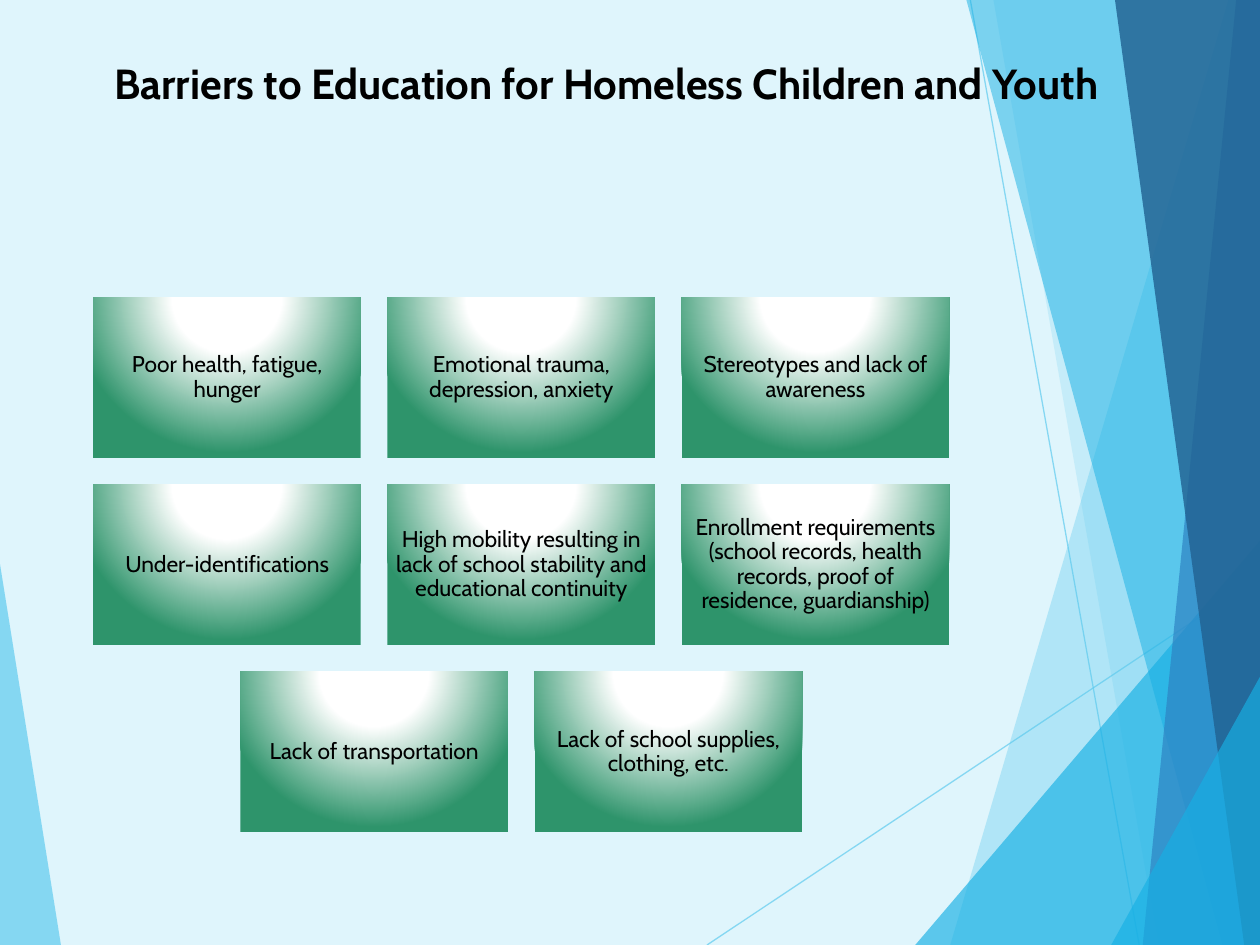
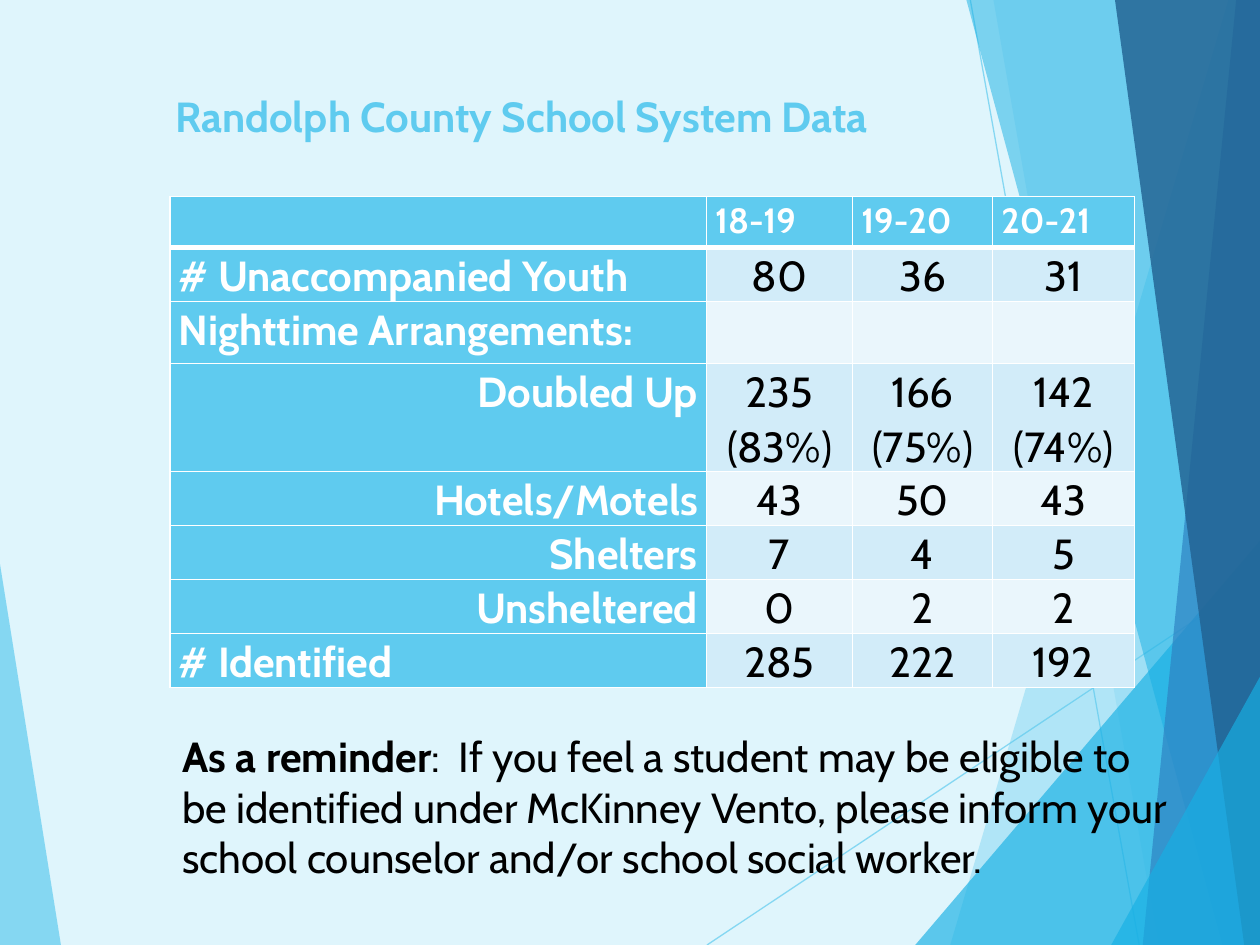
from lxml import etree
from pptx import Presentation
from pptx.dml.color import RGBColor
from pptx.enum import shapes, text
from pptx.oxml import parse_xml
from pptx.oxml.ns import qn
from pptx.util import Pt

SKY = RGBColor(0x5F, 0xCB, 0xEF)
AQUA = RGBColor(0x17, 0xB0, 0xE4)
BLUE = RGBColor(0x2E, 0x83, 0xC3)
NAVY = RGBColor(0x22, 0x62, 0x92)
PALE = RGBColor(0xDF, 0xF5, 0xFC)
GREEN = RGBColor(0x2E, 0x94, 0x6B)
BAND = RGBColor(0xD2, 0xEC, 0xF9)
LIGHT = RGBColor(0xEA, 0xF6, 0xFC)
WHITE = RGBColor(0xFF, 0xFF, 0xFF)
BLACK = RGBColor(0, 0, 0)
FONT = "Cabin"
NS = 'xmlns:a="http://schemas.openxmlformats.org/drawingml/2006/main"'
ALIGN = text.PP_ALIGN


def fade(node, share):
    color = node.find(".//" + qn("a:srgbClr"))
    etree.SubElement(color, qn("a:alpha")).set("val", str(share * 1000))


def style(para, size, color, bold=False, align=ALIGN.LEFT):
    para.alignment = align
    for run in para.runs:
        run.font.name = FONT
        run.font.size = Pt(size)
        run.font.bold = bold
        run.font.color.rgb = color


rays = [((404, 540), (721, 329)), ((554.5, 0), (651, 540))]
shards = [
    (SKY, 70, [(-1, 316), (35, 541), (-1, 540)]),
    (SKY, 36, [(702, 0), (543, 540), (721, 541), (721, 0)]),
    (SKY, 20, [(567.5, -1), (662, 540), (721, 540), (721, -1)]),
    (AQUA, 66, [(523, 540), (720, 309), (721, 540)]),
    (AQUA, 50, [(552, -1), (698.5, 540), (721, 540), (721, -1)]),
    (BLUE, 70, [(706.5, -1), (653, 540), (721, 540), (720, -1)]),
    (NAVY, 82, [(637, -1), (711, 540), (721, 540), (720, -1)]),
    (AQUA, 66, [(635, 540), (721, 385), (721, 540)]),
]
titles = [
    ("Barriers to Education for Homeless Children and Youth",
     (58.3, 29.5, 589.7, 69), BLACK, ALIGN.LEFT),
    ("Randolph County School System Data",
     (48.2, 48.2, 499.7, 103.7), SKY, ALIGN.CENTER),
]

deck = Presentation()
deck.slide_width, deck.slide_height = Pt(720), Pt(540)
for title, frame, color, align in titles:
    slide = deck.slides.add_slide(deck.slide_layouts[6])
    slide.background.fill.solid()
    slide.background.fill.fore_color.rgb = PALE
    for rank, (tint, share, spots) in enumerate(shards):
        path = [(Pt(x), Pt(y)) for x, y in spots]
        pen = slide.shapes.build_freeform(*path[0])
        pen.add_line_segments(path[1:], close=True)
        shard = pen.convert_to_shape()
        shard.shadow.inherit = False
        shard.fill.solid()
        shard.fill.fore_color.rgb = tint
        shard.line.fill.background()
        fade(shard._element.spPr, share)
        if rank == 0:
            for start, end in rays:
                ray = slide.shapes.add_connector(
                    shapes.MSO_CONNECTOR.STRAIGHT, *map(Pt, start + end))
                ray.line.color.rgb = SKY
                ray.line.width = Pt(0.75)
                fade(ray._element.spPr, 70)
                etree.SubElement(ray._element.spPr, qn("a:effectLst"))
    box = slide.shapes.add_textbox(*map(Pt, frame))
    box.text_frame.word_wrap = True
    box.text_frame.text = title
    style(box.text_frame.paragraphs[0], 24, color, True, align)

first, last = deck.slides

WIDE, HIGH = 152.9, 91.7
STEP, DROP = 168.1, 107
glow = f"""<a:gradFill {NS} rotWithShape="1"><a:gsLst>
<a:gs pos="0"><a:srgbClr val="{WHITE}"/></a:gs>
<a:gs pos="35000"><a:srgbClr val="{WHITE}"/></a:gs>
<a:gs pos="100000"><a:srgbClr val="{GREEN}"/></a:gs></a:gsLst>
<a:path path="circle"><a:fillToRect l="50000" t="-80000" r="50000" b="180000"/></a:path>
</a:gradFill>"""
tiles = [
    ["Poor health, fatigue, hunger", "Emotional trauma, depression, anxiety",
     "Stereotypes and lack of awareness"],
    ["Under-identifications",
     "High mobility resulting in lack of school stability and educational continuity",
     "Enrollment requirements (school records, health records, proof of residence, guardianship)"],
    ["Lack of transportation", "Lack of school supplies, clothing, etc."],
]
for row, names in enumerate(tiles):
    left = 53.3 + STEP * (3 - len(names)) / 2
    for col, name in enumerate(names):
        tile = first.shapes.add_shape(
            shapes.MSO_SHAPE.RECTANGLE, Pt(left + STEP * col),
            Pt(169.8 + DROP * row), Pt(WIDE), Pt(HIGH))
        tile.shadow.inherit = False
        tile.line.fill.background()
        tile.fill.background()
        props = tile._element.spPr
        props.replace(props.find(qn("a:noFill")), parse_xml(glow))
        body = tile.text_frame
        body.word_wrap = True
        body.vertical_anchor = text.MSO_ANCHOR.MIDDLE
        body.margin_left = body.margin_right = Pt(3.6)
        body.margin_top = body.margin_bottom = Pt(3.6)
        body.text = name
        body.paragraphs[0].line_spacing = 0.9
        style(body.paragraphs[0], 13, BLACK, align=ALIGN.CENTER)

data = [
    ("", "18-19", "19-20", "20-21"),
    ("# Unaccompanied Youth", "80", "36", "31"),
    ("Nighttime Arrangements:", "", "", ""),
    ("Doubled Up", "235 (83%)", "166 (75%)", "142 (74%)"),
    ("Hotels/Motels", "43", "50", "43"),
    ("Shelters", "7", "4", "5"),
    ("Unsheltered", "0", "2", "2"),
    ("# Identified", "285", "222", "192"),
]
widths = [306.5, 83.5, 80, 81]
heights = [29.2, 29.2, 35.3, 61.2, 29.2, 29.2, 29.2, 29.2]
grid = last.shapes.add_table(
    len(data), len(widths), Pt(97.2), Pt(112.4),
    Pt(sum(widths)), Pt(sum(heights))).table
for col, width in enumerate(widths):
    grid.columns[col].width = Pt(width)
for row, values in enumerate(data):
    grid.rows[row].height = Pt(heights[row])
    for col, value in enumerate(values):
        cell = grid.cell(row, col)
        head = row == 0 or col == 0
        cell.fill.solid()
        cell.fill.fore_color.rgb = SKY if head else BAND if row % 2 else LIGHT
        cell.margin_left = cell.margin_right = Pt(5)
        cell.margin_top = cell.margin_bottom = 0
        cell.text = value
        para = cell.text_frame.paragraphs[0]
        para.line_spacing = 1.07
        align = ALIGN.LEFT
        if row and col:
            align = ALIGN.CENTER
        elif 3 <= row <= 6:
            align = ALIGN.RIGHT
        style(para, 24 if row else 20, WHITE if head else BLACK, head, align)
        for rank, side in enumerate("LRTB"):
            thick = 3 if (row, side) in [(0, "B"), (1, "T")] else 1
            edge = parse_xml(
                f'<a:ln{side} {NS} w="{Pt(thick)}"><a:solidFill>'
                f'<a:srgbClr val="{WHITE}"/></a:solidFill></a:ln{side}>')
            cell._tc.get_or_add_tcPr().insert(rank, edge)

note = last.shapes.add_textbox(Pt(97.2), Pt(414), Pt(581.8), Pt(94.3)).text_frame
note.word_wrap = True
note.text = "As a reminder"
para = note.paragraphs[0]
para.add_run().text = (
    ":  If you feel a student may be eligible to be identified under McKinney Vento, "
    "please inform your school counselor and/or school social worker.")
style(para, 24, BLACK)
para.runs[0].font.bold = True

deck.save("out.pptx")
